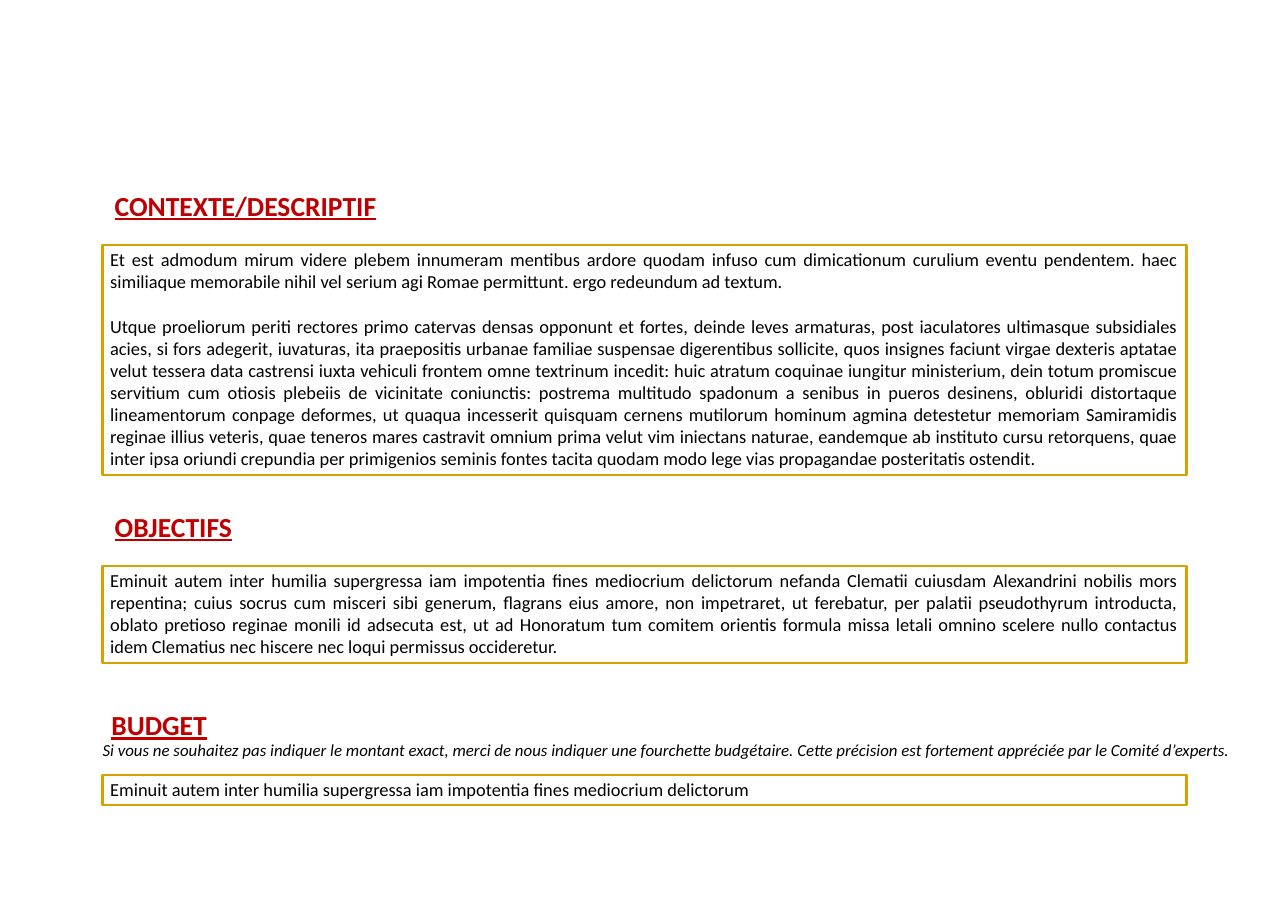
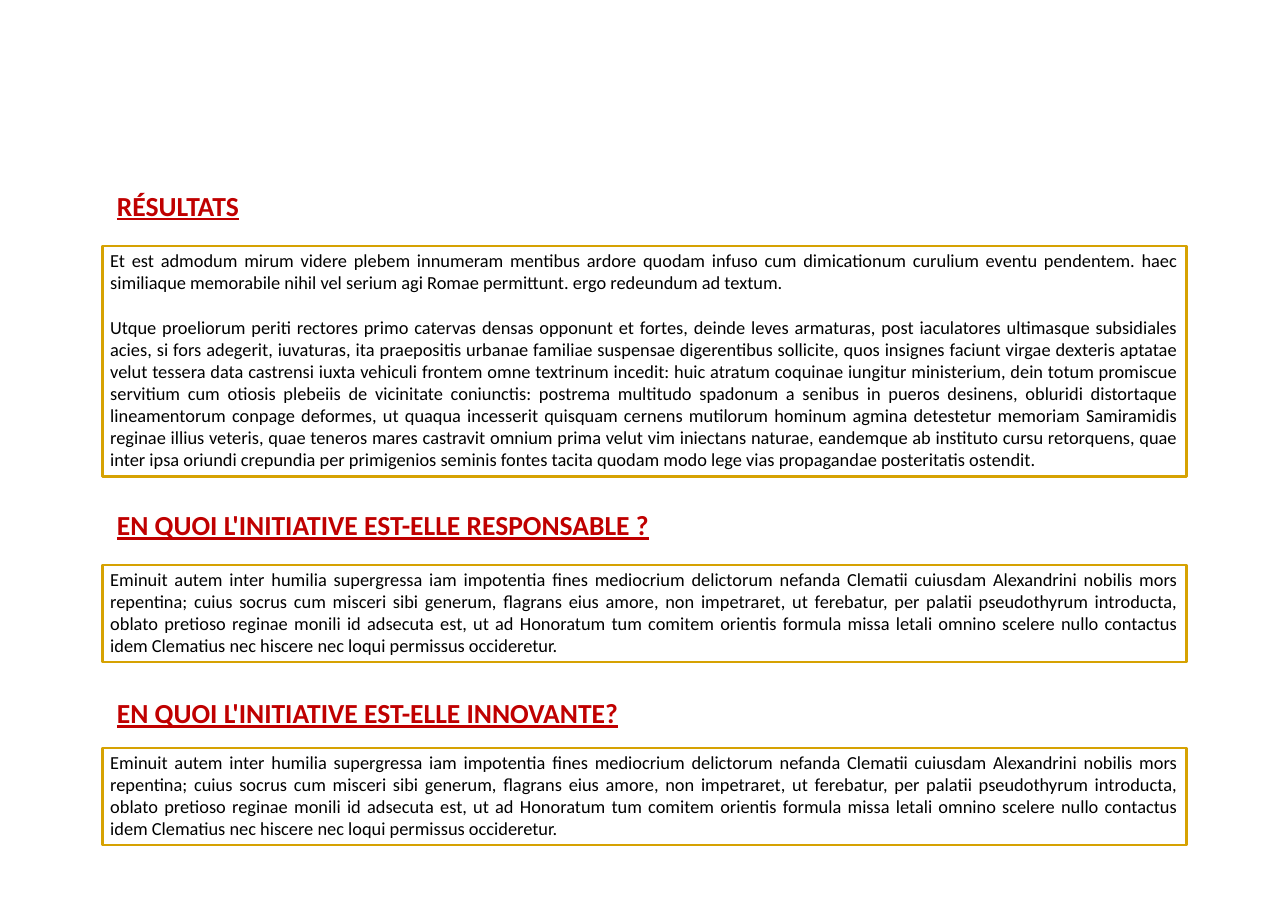
from pptx import Presentation
from pptx.dml.color import RGBColor
from pptx.enum.shapes import MSO_SHAPE
from pptx.enum.text import MSO_ANCHOR, MSO_AUTO_SIZE, PP_ALIGN
from pptx.util import Inches, Pt

FONT = "Calibri"
HEADING_RED = "C00000"
BORDER_GOLD = "D6A202"
TEXT_BLACK = "000000"
BOX_LEFT, BOX_WIDTH = 0.93, 9.83
HEADING_HEIGHT = 0.37
BLANK_LINE = Pt(14.6)

INTRO = (
    "Et est admodum mirum videre plebem innumeram mentibus ardore quodam infuso cum "
    "dimicationum curulium eventu pendentem. haec similiaque memorabile nihil vel serium "
    "agi Romae permittunt. ergo redeundum ad textum."
)
BATTLE = (
    "Utque proeliorum periti rectores primo catervas densas opponunt et fortes, deinde leves "
    "armaturas, post iaculatores ultimasque subsidiales acies, si fors adegerit, iuvaturas, "
    "ita praepositis urbanae familiae suspensae digerentibus sollicite, quos insignes faciunt "
    "virgae dexteris aptatae velut tessera data castrensi iuxta vehiculi frontem omne textrinum "
    "incedit:"
)
PROCESSION = (
    "huic atratum coquinae iungitur ministerium, dein totum promiscue servitium cum "
    "otiosis plebeiis de vicinitate coniunctis: postrema multitudo spadonum a senibus in pueros "
    "desinens, obluridi distortaque lineamentorum conpage deformes, ut quaqua incesserit quisquam "
    "cernens mutilorum hominum agmina detestetur memoriam Samiramidis reginae illius veteris, "
    "quae teneros mares castravit omnium prima velut vim iniectans naturae, eandemque ab "
    "instituto cursu retorquens, quae inter ipsa oriundi crepundia per primigenios seminis "
    "fontes tacita quodam modo lege vias propagandae posteritatis ostendit."
)
DETAIL = " ".join([BATTLE, PROCESSION])
BUDGET_RANGE = (
    "Eminuit autem inter humilia supergressa iam impotentia fines mediocrium delictorum"
)
STORY = BUDGET_RANGE + (
    " nefanda Clematii cuiusdam Alexandrini nobilis mors repentina; cuius socrus cum misceri "
    "sibi generum, flagrans eius amore, non impetraret, ut ferebatur, per palatii pseudothyrum "
    "introducta, oblato pretioso reginae monili id adsecuta est, ut ad Honoratum tum comitem "
    "orientis formula missa letali omnino scelere nullo contactus idem Clematius nec hiscere "
    "nec loqui permissus occideretur."
)
BUDGET_NOTE = (
    "Si vous ne souhaitez pas indiquer le montant exact, merci de nous indiquer une fourchette "
    "budgétaire. Cette précision est fortement appréciée par le Comité d’experts."
)


def rgb(hex_code):
    """Return the colour for a hex string."""
    return RGBColor.from_string(hex_code)


def write(shape, texts, size, color, align, bold=False, italic=False, underline=False):
    """Fill a shape with evenly formatted paragraphs, one blank line apart."""
    frame = shape.text_frame
    frame.word_wrap = True
    frame.auto_size = MSO_AUTO_SIZE.NONE
    frame.vertical_anchor = MSO_ANCHOR.TOP
    frame.margin_left = frame.margin_right = Inches(0.07)
    frame.margin_top = frame.margin_bottom = Inches(0.03)
    for index, text in enumerate(texts):
        paragraph = frame.add_paragraph() if index else frame.paragraphs[0]
        paragraph.text = text
        paragraph.alignment = align
        if index:
            paragraph.space_before = BLANK_LINE
        font = paragraph.font
        font.name, font.size, font.color.rgb = FONT, Pt(size), rgb(color)
        font.bold, font.italic, font.underline = bold, italic, underline


def style_heading(shape, text):
    """Write an underlined red heading."""
    write(shape, [text], 18, HEADING_RED, PP_ALIGN.LEFT, bold=True, underline=True)


def add_title(slide, text, left, top):
    """Place the slide's first heading in its title placeholder."""
    title = slide.shapes.title
    title.left, title.top = Inches(left), Inches(top)
    title.width, title.height = Inches(4.45), Inches(HEADING_HEIGHT)
    style_heading(title, text)


def add_heading(slide, text, left, top):
    """Add the heading of a further section."""
    heading = slide.shapes.add_textbox(
        Inches(left), Inches(top), Inches(6.27), Inches(HEADING_HEIGHT))
    style_heading(heading, text)


def add_answer(slide, texts, top, height):
    """Add a gold-framed answer box."""
    answer = slide.shapes.add_shape(
        MSO_SHAPE.RECTANGLE, Inches(BOX_LEFT), Inches(top), Inches(BOX_WIDTH), Inches(height))
    answer.shadow.inherit = False
    answer.fill.background()
    answer.line.color.rgb = rgb(BORDER_GOLD)
    answer.line.width = Pt(1.5)
    write(answer, texts, 12, TEXT_BLACK, PP_ALIGN.JUSTIFY)


def add_note(slide, text, left, top):
    """Add an italic hint on one line."""
    note = slide.shapes.add_textbox(Inches(left), Inches(top), Inches(10.66), Inches(0.25))
    write(note, [text], 11, TEXT_BLACK, PP_ALIGN.JUSTIFY, italic=True)


def add_sections(deck, sections):
    """Add a slide of headings, each with its answer box, and return it."""
    slide = deck.slides.add_slide(deck.slide_layouts[5])
    for index, (heading, left, top, texts, box_top, box_height) in enumerate(sections):
        place_heading = add_heading if index else add_title
        place_heading(slide, heading, left, top)
        add_answer(slide, texts, box_top, box_height)
    return slide


def main():
    """Build and save the two slides."""
    deck = Presentation()
    deck.slide_width, deck.slide_height = Inches(11.68), Inches(8.26)
    project = add_sections(deck, [
        ("CONTEXTE/DESCRIPTIF", 0.97, 1.68, [INTRO, DETAIL], 2.22, 2.09),
        ("OBJECTIFS", 0.97, 4.59, [STORY], 5.13, 0.88),
        ("BUDGET", 0.94, 6.39, [BUDGET_RANGE], 7.03, 0.27),
    ])
    add_note(project, BUDGET_NOTE, 0.86, 6.68)
    add_sections(deck, [
        ("RÉSULTATS", 0.99, 1.68, [INTRO, DETAIL], 2.23, 2.09),
        ("EN QUOI L'INITIATIVE EST-ELLE RESPONSABLE ?", 0.99, 4.58, [STORY], 5.12, 0.88),
        ("EN QUOI L'INITIATIVE EST-ELLE INNOVANTE?", 0.99, 6.28, [STORY], 6.78, 0.88),
    ])
    deck.save("out.pptx")


if __name__ == "__main__":
    main()
